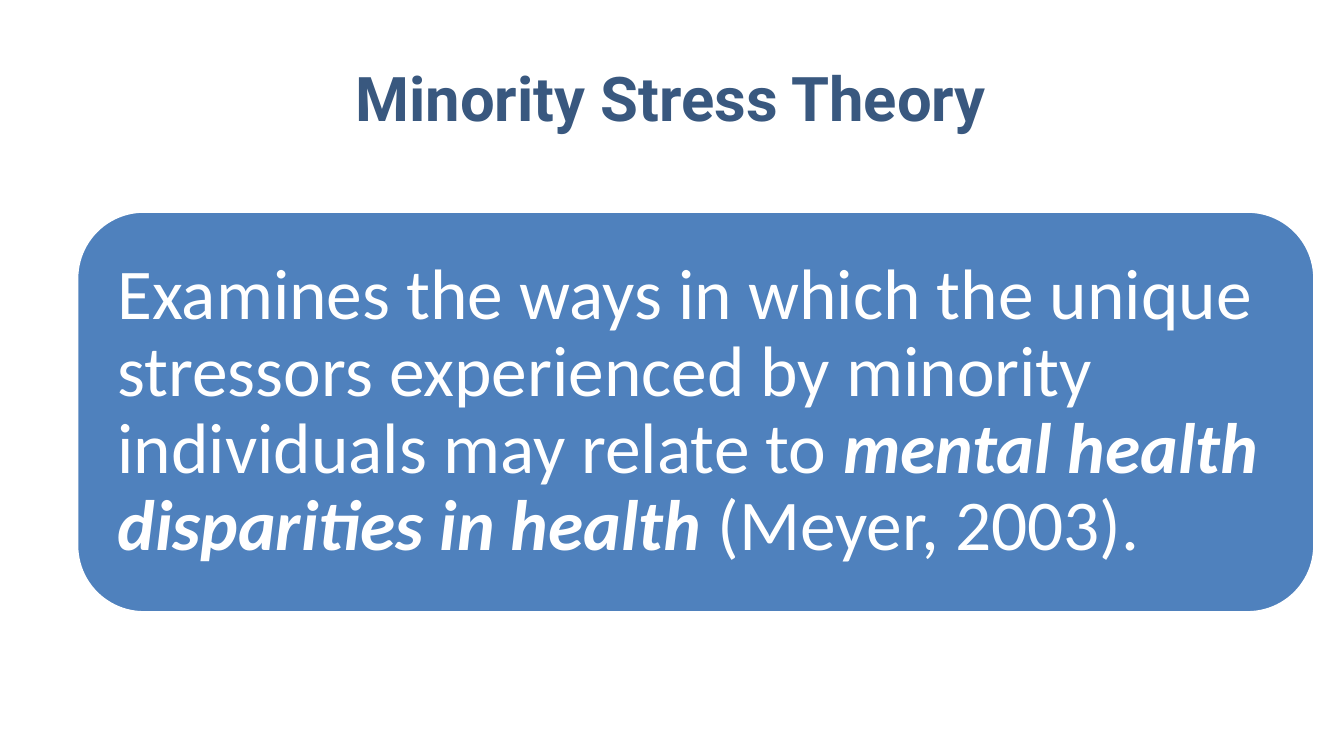
from pptx import Presentation
from pptx.dml.color import RGBColor
from pptx.enum.shapes import MSO_SHAPE
from pptx.enum.text import MSO_ANCHOR, PP_ALIGN
from pptx.util import Pt

ROUND = MSO_SHAPE.ROUNDED_RECTANGLE
MIDDLE = MSO_ANCHOR.MIDDLE
LEFT, CENTER = PP_ALIGN.LEFT, PP_ALIGN.CENTER

TITLE = {"name": "Roboto", "size": Pt(44), "bold": True}
BODY = {"name": "Calibri", "size": Pt(51), "bold": False, "italic": False}
STRONG = {**BODY, "bold": True, "italic": True}


def color(code):
    """Return the colour for a hex string."""
    return RGBColor.from_string(code)


def assign(item, values):
    """Set each named attribute of an item."""
    for name, value in values.items():
        setattr(item, name, value)


def write(shape, runs, ink, align, inset, spacing=1.0):
    """Fill a shape with one paragraph of styled runs."""
    frame = shape.text_frame
    sides = ("left", "top", "right", "bottom")
    assign(frame, {f"margin_{side}": Pt(inset) for side in sides})
    assign(frame, {"word_wrap": True, "vertical_anchor": MIDDLE})
    para = frame.paragraphs[0]
    assign(para, {"alignment": align, "line_spacing": spacing})
    for text, style in runs:
        run = para.add_run()
        run.text = text
        assign(run.font, style)
        run.font.color.rgb = color(ink)


def add_title(slide, text, box):
    """Add the centred slide heading."""
    shape = slide.shapes.add_textbox(*map(Pt, box))
    write(shape, [(text, TITLE)], "39587F", CENTER, 4)


def add_panel(slide, runs, box):
    """Add a rounded panel that holds a statement."""
    shape = slide.shapes.add_shape(ROUND, *map(Pt, box))
    shape.shadow.inherit = False
    shape.fill.solid()
    shape.fill.fore_color.rgb = color("4F81BD")
    shape.line.color.rgb = color("FFFFFF")
    shape.line.width = Pt(2)
    write(shape, runs, "FFFFFF", LEFT, 15, 0.9)


def main():
    """Build and save the slide."""
    deck = Presentation()
    assign(deck, {"slide_width": Pt(960), "slide_height": Pt(540)})
    slide = deck.slides.add_slide(deck.slide_layouts[6])
    add_title(slide, "Minority Stress Theory", (20, 18, 919, 102))
    add_panel(slide, [
        ("Examines the ways in which the unique stressors experienced by "
         "minority individuals may relate to ", BODY),
        ("mental health disparities in health ", STRONG),
        ("(Meyer, 2003).", BODY),
    ], (55, 151, 884, 286.5))
    deck.save("out.pptx")


if __name__ == "__main__":
    main()
